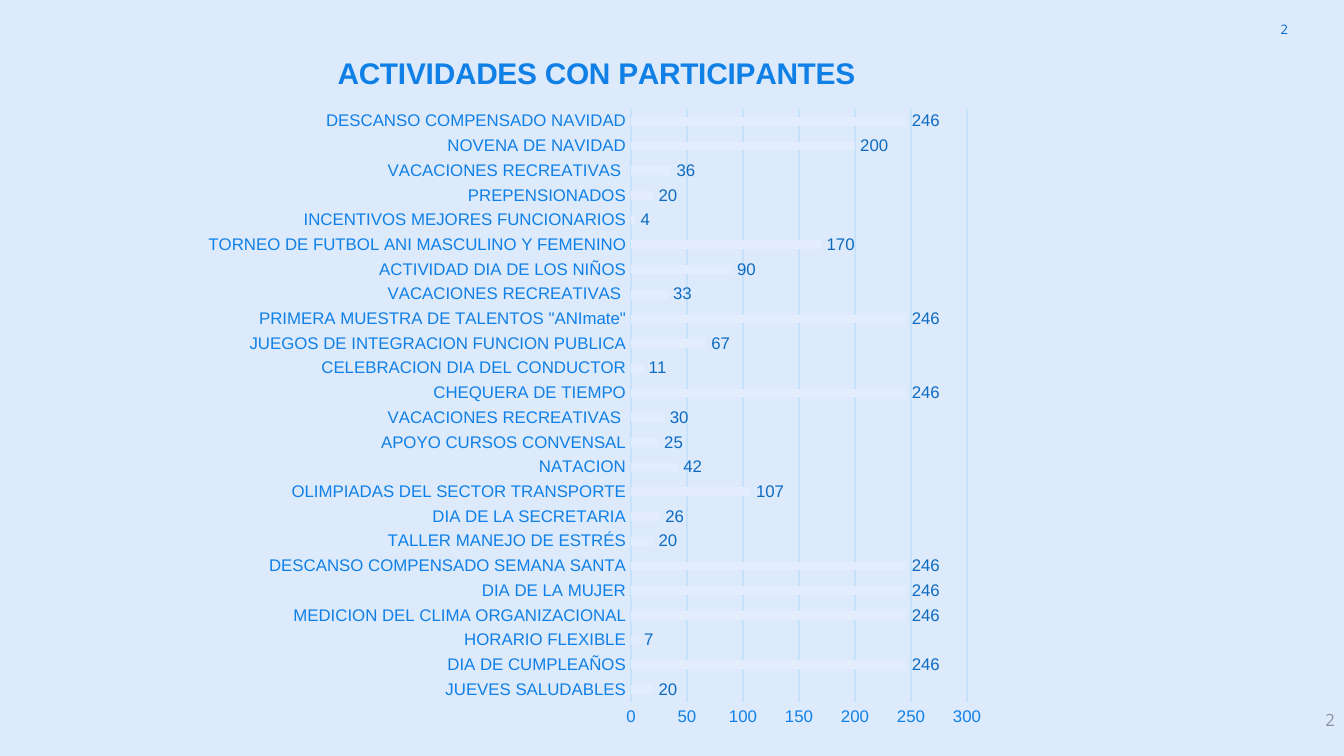
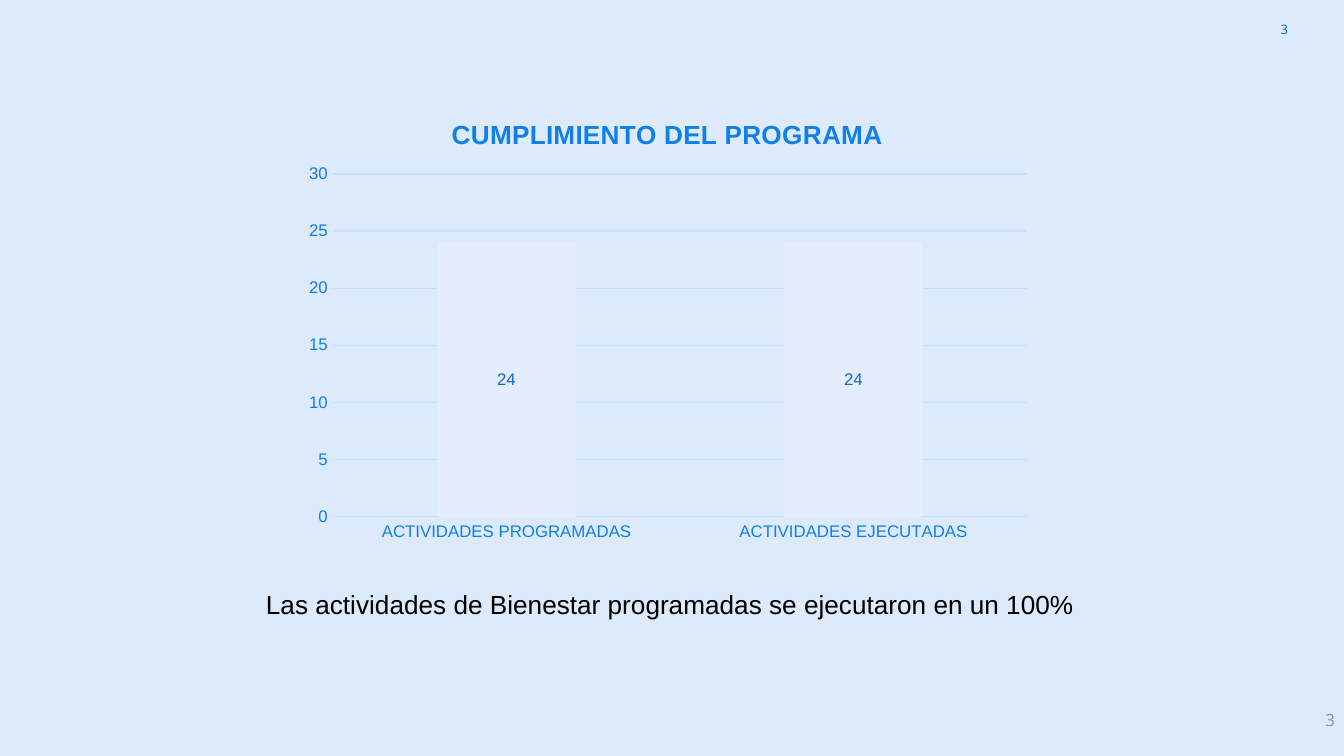
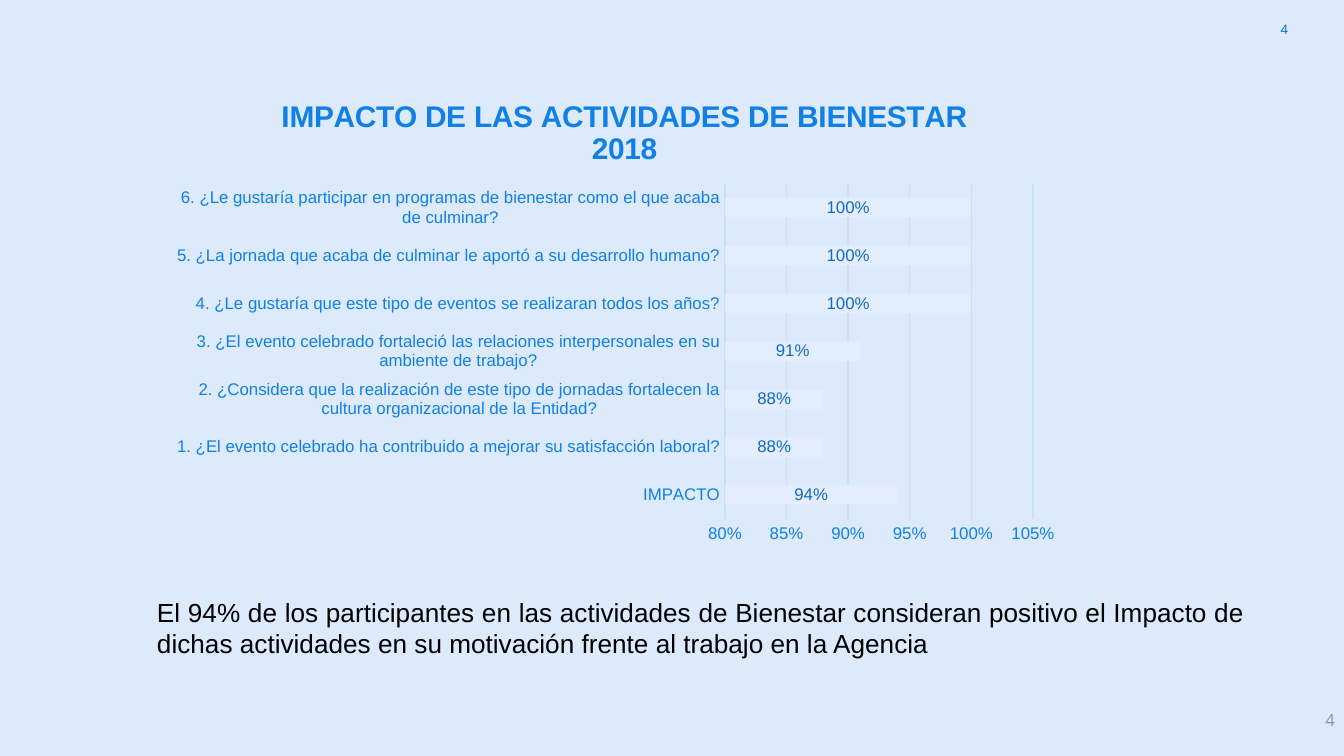
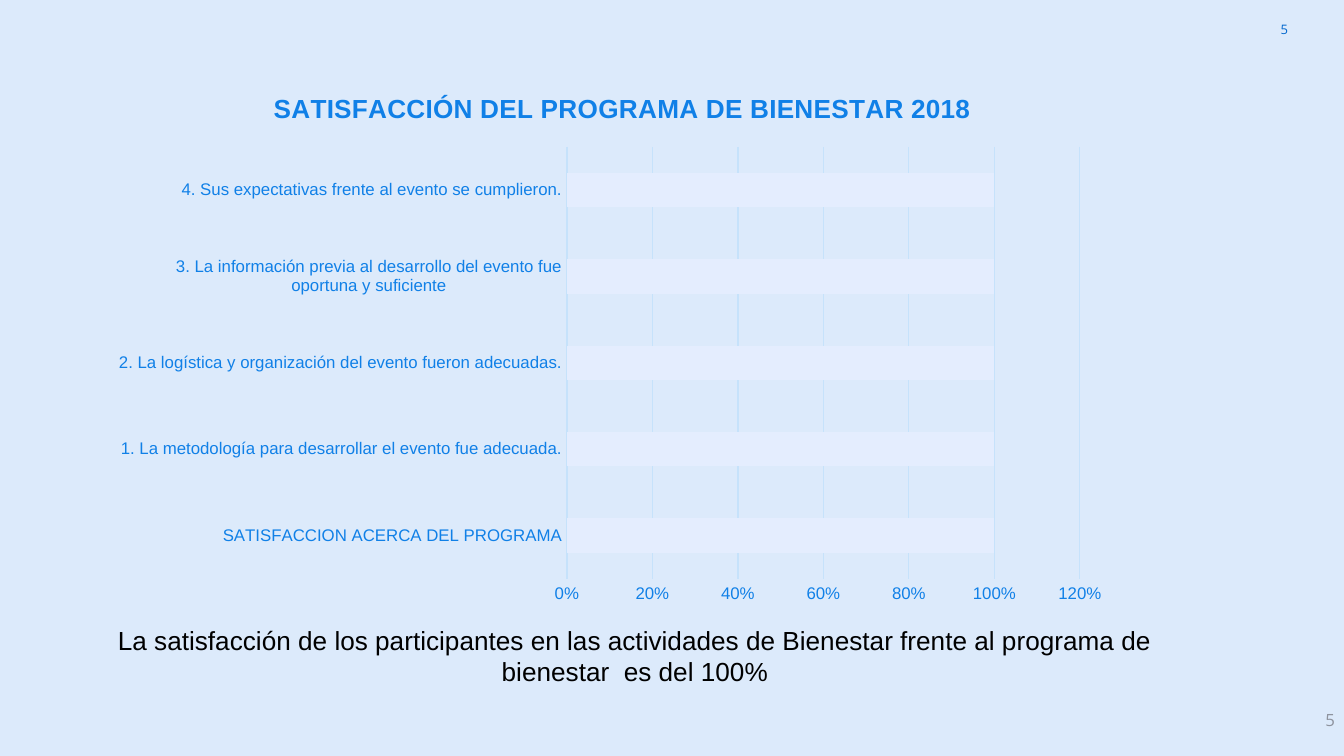
from pptx import Presentation
from pptx import util as u
from pptx.chart.data import CategoryChartData
from pptx.dml.color import RGBColor
from pptx.enum import chart as ch
from pptx.enum import text
from pptx.oxml import parse_xml
from pptx.oxml.ns import nsdecls

PX_PER_INCH = 134.4
BACKGROUND = "DCEAFB"
NUMBER_BLUE = "0066CD"
NUMBER_GRAY = "8E939E"
CHART_TEXT = "073763"
AXIS_TEXT = "1080E7"
GRID = "C6E2FB"
BAR = "E4EDFE"
VALUE_TEXT = "0E6BC1"
BODY_TEXT = "000000"

ALIGN = text.PP_ALIGN
BAR_TYPE = ch.XL_CHART_TYPE
LABEL_AT = ch.XL_LABEL_POSITION

ACTIVITIES = [
    ("JUEVES SALUDABLES", 20),
    ("DIA DE CUMPLEAÑOS", 246),
    ("HORARIO FLEXIBLE", 7),
    ("MEDICION DEL CLIMA ORGANIZACIONAL", 246),
    ("DIA DE LA MUJER", 246),
    ("DESCANSO COMPENSADO SEMANA SANTA", 246),
    ("TALLER MANEJO DE ESTRÉS", 20),
    ("DIA DE LA SECRETARIA", 26),
    ("OLIMPIADAS DEL SECTOR TRANSPORTE", 107),
    ("NATACION", 42),
    ("APOYO CURSOS CONVENSAL", 25),
    ("VACACIONES RECREATIVAS ", 30),
    ("CHEQUERA DE TIEMPO", 246),
    ("CELEBRACION DIA DEL CONDUCTOR", 11),
    ("JUEGOS DE INTEGRACION FUNCION PUBLICA", 67),
    ('PRIMERA MUESTRA DE TALENTOS "ANImate"', 246),
    ("VACACIONES RECREATIVAS ", 33),
    ("ACTIVIDAD DIA DE LOS NIÑOS", 90),
    ("TORNEO DE FUTBOL ANI MASCULINO Y FEMENINO", 170),
    ("INCENTIVOS MEJORES FUNCIONARIOS", 4),
    ("PREPENSIONADOS", 20),
    ("VACACIONES RECREATIVAS ", 36),
    ("NOVENA DE NAVIDAD", 200),
    ("DESCANSO COMPENSADO NAVIDAD", 246),
]
COMPLIANCE = [("ACTIVIDADES PROGRAMADAS", 24), ("ACTIVIDADES EJECUTADAS", 24)]
IMPACT = [
    ("IMPACTO", 0.94),
    ("1. ¿El evento celebrado ha contribuido a mejorar su satisfacción laboral?", 0.88),
    ("2. ¿Considera que la realización de este tipo de jornadas fortalecen la "
     "cultura organizacional de la Entidad?", 0.88),
    ("3. ¿El evento celebrado fortaleció las relaciones interpersonales en su "
     "ambiente de trabajo?", 0.91),
    ("4. ¿Le gustaría que este tipo de eventos se realizaran todos los años?", 1),
    ("5. ¿La jornada que acaba de culminar le aportó a su desarrollo humano?", 1),
    ("6. ¿Le gustaría participar en programas de bienestar como el que acaba de "
     "culminar?", 1),
]
SATISFACTION = [
    ("SATISFACCION ACERCA DEL PROGRAMA", 1),
    ("1. La metodología para desarrollar el evento fue adecuada.", 1),
    ("2. La logística y organización del evento fueron adecuadas.", 1),
    ("3. La información previa al desarrollo del evento fue oportuna y suficiente", 1),
    ("4. Sus expectativas frente al evento se cumplieron.", 1),
]

# Boxes are (left, top, width, height) in px; plot boxes are relative to their chart.
# scale is (minimum, maximum, step) of the value axis.
SLIDES = [
    dict(
        chart=dict(
            title="ACTIVIDADES CON PARTICIPANTES", title_size=16, rows=ACTIVITIES,
            kind=BAR_TYPE.BAR_CLUSTERED, box=(194, 28, 805, 712),
            plot_box=(437, 81, 336, 593), scale=(0, 300, 50), gap=182,
            labels_at=LABEL_AT.OUTSIDE_END),
    ),
    dict(
        chart=dict(
            title="CUMPLIMIENTO DEL PROGRAMA", rows=COMPLIANCE,
            kind=BAR_TYPE.COLUMN_STACKED, box=(294, 97, 747, 454),
            plot_box=(39, 77, 694, 343), scale=(0, 30, 5), labels_at=LABEL_AT.CENTER),
        conclusion=dict(
            words="Las actividades de Bienestar programadas se ejecutaron en un 100%",
            box=(253, 581, 839, 46), align=ALIGN.JUSTIFY),
    ),
    dict(
        chart=dict(
            title="IMPACTO DE LAS ACTIVIDADES DE BIENESTAR 2018", title_size=16,
            rows=IMPACT, kind=BAR_TYPE.BAR_STACKED, box=(177, 75, 895, 478),
            plot_box=(548, 109, 308, 335), scale=(0.8, 1.05, 0.05),
            labels_at=LABEL_AT.CENTER, number_format="0%"),
        conclusion=dict(
            words="El 94% de los participantes en las actividades de Bienestar consideran "
                  "positivo el Impacto de dichas actividades en su motivación frente al "
                  "trabajo en la Agencia",
            box=(144, 589, 1114, 77), align=ALIGN.JUSTIFY),
    ),
    dict(
        chart=dict(
            title="SATISFACCIÓN DEL PROGRAMA DE BIENESTAR 2018", rows=SATISFACTION,
            kind=BAR_TYPE.BAR_STACKED, box=(116, 69, 1013, 544),
            plot_box=(451, 78, 513, 432), scale=(0, 1.2, 0.2), number_format="0%",
            axis_line=False),
        conclusion=dict(
            words="La satisfacción de los participantes en las actividades de Bienestar "
                  "frente al programa de bienestar  es del 100%",
            box=(78, 617, 1114, 77), align=ALIGN.CENTER),
    ),
]


def px(length):
    return u.Emu(round(length * u.Inches(1) / PX_PER_INCH))


def color(hex_value):
    return RGBColor.from_string(hex_value)


def style_font(font, size, hex_value, name="Arial", bold=False):
    font.size = u.Pt(size)
    font.name = name
    font.bold = bold
    font.color.rgb = color(hex_value)


def style_line(line, hex_value):
    line.color.rgb = color(hex_value)
    line.width = u.Pt(0.75)


def add_words(slide, words, box, size, hex_value, align, font_name="Arial",
              insets=(13, 7), anchor=text.MSO_ANCHOR.TOP):
    frame = slide.shapes.add_textbox(*map(px, box)).text_frame
    frame.word_wrap = True
    frame.vertical_anchor = anchor
    frame.margin_left = frame.margin_right = px(insets[0])
    frame.margin_top = frame.margin_bottom = px(insets[1])
    frame.text = words
    paragraph = frame.paragraphs[0]
    paragraph.alignment = align
    style_font(paragraph.runs[0].font, size, hex_value, font_name)


def add_page_numbers(slide, number):
    for box, size, hex_value, insets in (
            ((1220, 0, 81, 58), 7, NUMBER_BLUE, (13, 13)),
            ((1042, 700, 302, 40), 9, NUMBER_GRAY, (9, 5))):
        add_words(slide, str(number), box, size, hex_value, ALIGN.RIGHT,
                  "Open Sans", insets, text.MSO_ANCHOR.MIDDLE)


def place_plot(chart, box, plot_box):
    """Fix the inner plot area as fractions of the chart box."""
    width, height = box[2:]
    fractions = zip("xywh", plot_box, (width, height, width, height))
    places = "".join(f'<c:{key} val="{length / whole:.4f}"/>'
                     for key, length, whole in fractions)
    layout = parse_xml(
        f'<c:layout {nsdecls("c")}><c:manualLayout><c:layoutTarget val="inner"/>'
        f'<c:xMode val="edge"/><c:yMode val="edge"/>{places}</c:manualLayout></c:layout>')
    plot_area = chart.element.chart.plotArea
    for old in plot_area.findall(layout.tag):
        plot_area.remove(old)
    plot_area.insert(0, layout)


def add_bars(slide, title, rows, kind, box, plot_box, scale, title_size=14, gap=150,
             labels_at=None, number_format="General", axis_line=True):
    data = CategoryChartData(number_format=number_format)
    data.categories = [name for name, _ in rows]
    data.add_series("Series 1", [value for _, value in rows])
    chart = slide.shapes.add_chart(kind, *map(px, box), data).chart
    style_font(chart.font, 10, CHART_TEXT)
    chart.has_legend = False
    place_plot(chart, box, plot_box)

    # Title
    heading = chart.chart_title.text_frame
    heading.text = title
    style_font(heading.paragraphs[0].runs[0].font, title_size, AXIS_TEXT, bold=True)

    # Axes
    for axis in (chart.category_axis, chart.value_axis):
        axis.major_tick_mark = axis.minor_tick_mark = ch.XL_TICK_MARK.NONE
        style_font(axis.tick_labels.font, 9, AXIS_TEXT)
        axis.format.line.fill.background()
    if axis_line:
        style_line(chart.category_axis.format.line, GRID)
    values = chart.value_axis
    values.minimum_scale, values.maximum_scale, values.major_unit = scale
    values.has_major_gridlines = True
    style_line(values.major_gridlines.format.line, GRID)
    values.tick_labels.number_format = number_format
    values.tick_labels.number_format_is_linked = False

    # Bars and their values
    plot = chart.plots[0]
    plot.vary_by_categories = False
    plot.gap_width = gap
    fill = plot.series[0].format.fill
    fill.solid()
    fill.fore_color.rgb = color(BAR)
    if labels_at is not None:
        labels = plot.series[0].data_labels
        labels.show_value = True
        labels.position = labels_at
        labels.number_format = number_format
        labels.number_format_is_linked = False
        style_font(labels.font, 9, VALUE_TEXT)


def main():
    prs = Presentation()
    prs.slide_width, prs.slide_height = px(1344), px(756)
    backdrop = prs.slide_master.background.fill
    backdrop.solid()
    backdrop.fore_color.rgb = color(BACKGROUND)
    blank = prs.slide_layouts[6]
    for number, content in enumerate(SLIDES, start=2):
        slide = prs.slides.add_slide(blank)
        add_page_numbers(slide, number)
        add_bars(slide, **content["chart"])
        if "conclusion" in content:
            add_words(slide, size=14, hex_value=BODY_TEXT, **content["conclusion"])
    prs.save("out.pptx")


if __name__ == "__main__":
    main()
